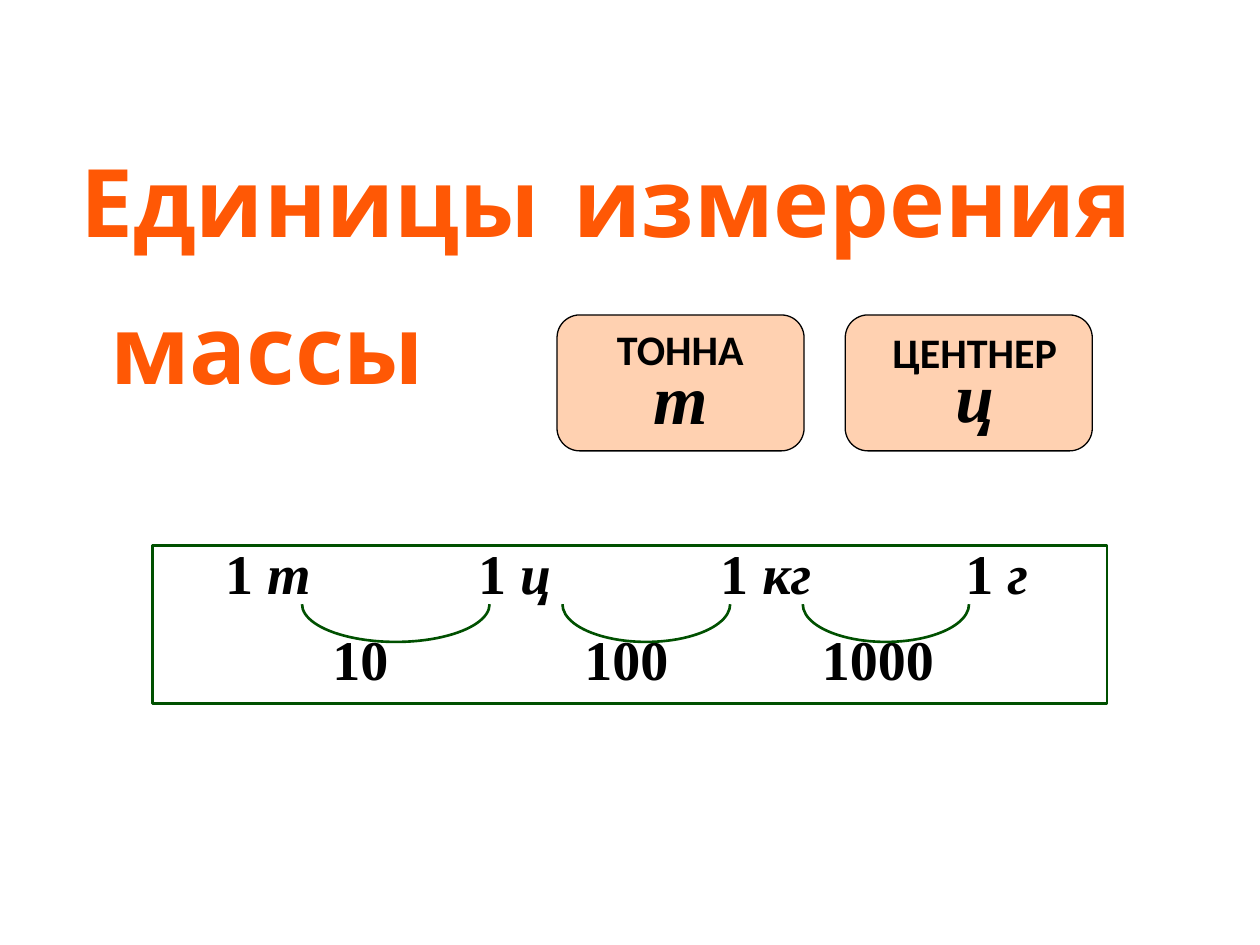
from pptx import Presentation
from pptx import util as u
from pptx.dml.color import RGBColor
from pptx.enum import shapes, text
from pptx.oxml.ns import qn
from lxml import etree

Cm, Pt = u.Cm, u.Pt
ORANGE, PEACH, GREEN, BLACK, WHITE = "FF5805", "FFD1B1", "005000", "000000", "FFFFFF"
SERIF = "Times New Roman"


def rgb(value):
    return RGBColor.from_string(value)


def add_run(p, content, size, font, color=BLACK, italic=False):
    r = p.add_run()
    r.text = content
    r.font.size, r.font.name = Pt(size), font
    r.font.bold, r.font.italic = True, italic
    r.font.color.rgb = rgb(color)


def add_shape(slide, kind, box, line, width, fill=None):
    sp = slide.shapes.add_shape(kind, *map(Cm, box))
    sp.shadow.inherit = False
    if fill:
        sp.fill.solid()
        sp.fill.fore_color.rgb = rgb(fill)
    else:
        sp.fill.background()
    sp.line.color.rgb = rgb(line)
    sp.line.width = Pt(width)
    return sp


def add_textbox(slide, box, anchor):
    tf = slide.shapes.add_textbox(*map(Cm, box)).text_frame
    tf.word_wrap = True
    tf.vertical_anchor = anchor
    return tf


def next_paragraph(tf, first, spacing, align):
    p = tf.paragraphs[0] if first else tf.add_paragraph()
    p.line_spacing, p.alignment = spacing, align
    return p


def set_tabs(p, stops):
    """Give the paragraph left tab stops, in centimetres."""
    tabs = etree.SubElement(p._p.get_or_add_pPr(), qn("a:tabLst"))
    for stop in stops:
        etree.SubElement(tabs, qn("a:tab"), pos=str(int(Cm(stop))), algn="l")


def add_title(slide):
    tf = add_textbox(slide, (1.37, 2.34, 22.66, 5.92), text.MSO_ANCHOR.BOTTOM)
    for i, (line, indent) in enumerate([("Единицы измерения", 0), ("массы", 0.6)]):
        p = next_paragraph(tf, i == 0, 1.3, text.PP_ALIGN.LEFT)
        p._p.get_or_add_pPr().set("marL", str(int(Cm(indent))))
        add_run(p, line, 54, "Comic Neue", ORANGE)


def add_card(slide, left):
    sp = add_shape(slide, shapes.MSO_SHAPE.ROUNDED_RECTANGLE,
                   (left, 6.35, 4.98, 2.74), BLACK, 0.75, PEACH)
    sp.adjustments[0] = 0.167


def add_unit(slide, box, name, symbol, spacings):
    tf = add_textbox(slide, box, text.MSO_ANCHOR.MIDDLE)
    p = next_paragraph(tf, True, spacings[0], text.PP_ALIGN.CENTER)
    add_run(p, name, 24, "Calibri")
    p = next_paragraph(tf, False, spacings[1], text.PP_ALIGN.CENTER)
    add_run(p, symbol, 40, SERIF, italic=True)


def add_ratios(slide):
    """Draw the frame with the units above and their ratios below."""
    sp = add_shape(slide, shapes.MSO_SHAPE.RECTANGLE,
                   (3.07, 11, 19.25, 3.18), GREEN, 1.5, WHITE)
    tf = sp.text_frame
    tf.margin_left = tf.margin_right = tf.margin_top = tf.margin_bottom = 0
    tf.vertical_anchor = text.MSO_ANCHOR.MIDDLE

    p = next_paragraph(tf, True, 0.65, text.PP_ALIGN.LEFT)
    set_tabs(p, (1.47, 6.57, 11.45, 16.39))
    for unit in ("т", "ц", "кг", "г"):
        add_run(p, "\t1 ", 32, SERIF)
        add_run(p, unit, 32, SERIF, italic=True)

    p = next_paragraph(tf, False, 0.65, text.PP_ALIGN.LEFT)
    p.space_before = Pt(24)
    set_tabs(p, (3.63, 8.71, 13.5))
    for ratio in ("10", "100", "1000"):
        add_run(p, "\t" + ratio, 32, SERIF)


def add_arc(slide, center, length):
    """Link two units with a bracket turned to open upwards."""
    depth, middle = 0.76, 12.56
    box = (center - depth / 2, middle - length / 2, depth, length)
    sp = add_shape(slide, shapes.MSO_SHAPE.LEFT_BRACKET, box, GREEN, 1.5)
    sp.adjustments[0] = length / depth / 2
    sp.rotation = 270


def main():
    prs = Presentation()
    prs.slide_width, prs.slide_height = Cm(25.4), Cm(19.05)
    slide = prs.slides.add_slide(prs.slide_layouts[6])
    add_title(slide)
    for left in (11.23, 17.04):
        add_card(slide, left)
    add_unit(slide, (11.43, 6.55, 4.57, 2.39), "ТОННА", "т", (0.85, 0.75))
    add_unit(slide, (17.3, 6.73, 4.7, 2.16), "ЦЕНТНЕР", "ц", (0.7, 0.7))
    add_ratios(slide)
    for center, length in ((7.98, 3.78), (13.03, 3.38), (17.86, 3.35)):
        add_arc(slide, center, length)
    prs.save("out.pptx")


if __name__ == "__main__":
    main()
